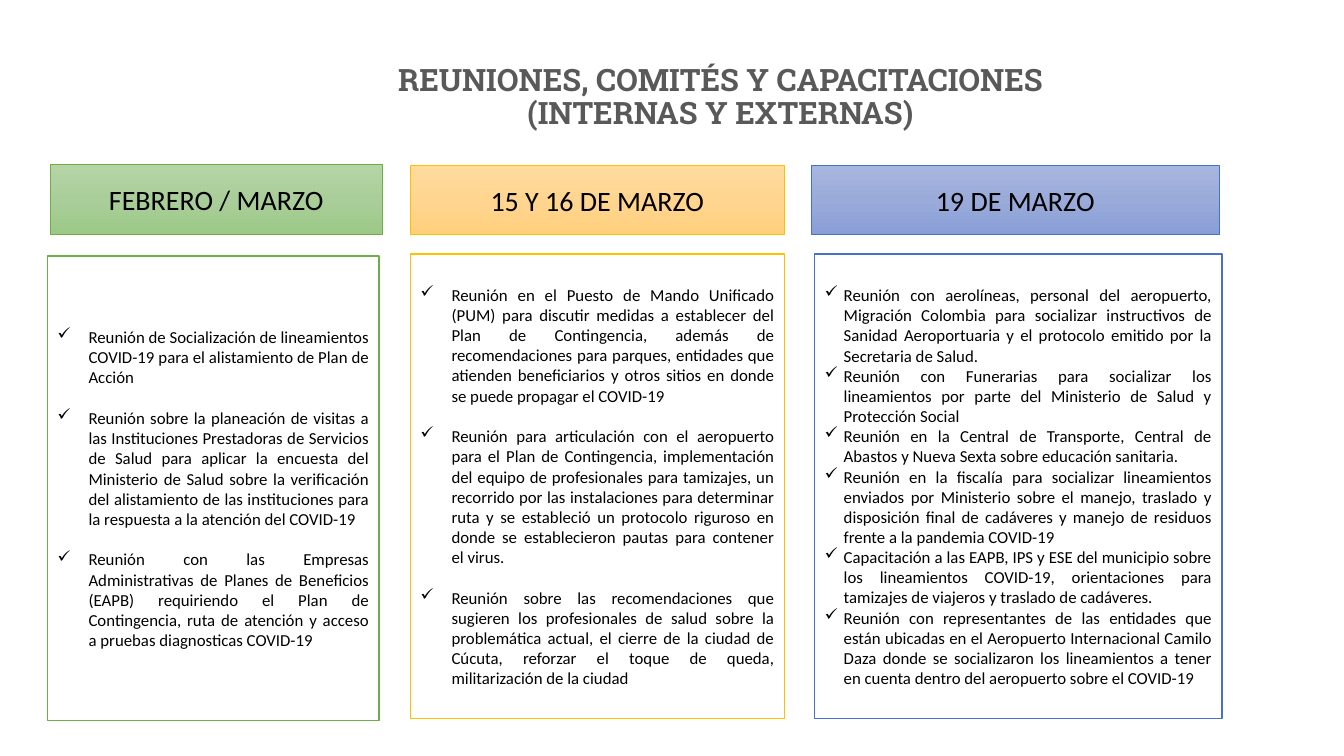
from copy import deepcopy
from dataclasses import dataclass

from lxml import etree
from pptx import Presentation
from pptx.dml.color import RGBColor
from pptx.enum.shapes import MSO_SHAPE
from pptx.enum.text import MSO_ANCHOR, PP_ALIGN
from pptx.oxml.ns import qn
from pptx.util import Inches, Pt

RECTANGLE = MSO_SHAPE.RECTANGLE
MIDDLE = MSO_ANCHOR.MIDDLE
CENTER, JUSTIFY = PP_ALIGN.CENTER, PP_ALIGN.JUSTIFY


@dataclass(frozen=True)
class Theme:
    title_font: str = "Roboto Slab"
    body_font: str = "Calibri"
    title_size: int = 22
    heading_size: int = 20
    body_size: int = 12
    title_color: str = "595959"
    text_color: str = "000000"
    panel_color: str = "FFFFFF"
    green: tuple = ("70AD47", ("B5D5A7", "AACE9A", "9CC987"))
    amber: tuple = ("FFC000", ("FFDB9E", "FFD590", "FFD07C"))
    blue: tuple = ("4472C4", ("A8B7DF", "9AABD9", "889ED7"))


THEME = Theme()
TITLE = "REUNIONES, COMITÉS Y CAPACITACIONES (INTERNAS Y EXTERNAS)"

# heading, colours, heading box, panel box, bullet indent (in), gap between items (pt), items
COLUMNS = [
    ("FEBRERO / MARZO", THEME.green, (0.5, 1.63, 3.29, 0.7), (0.47, 2.54, 3.29, 4.61), 0.31, 14.6, [
        "Reunión de Socialización de lineamientos COVID-19 para el alistamiento de Plan de Acción",
        "Reunión sobre la planeación de visitas a las Instituciones Prestadoras de Servicios de Salud "
        "para aplicar la encuesta del Ministerio de Salud sobre la verificación del alistamiento de "
        "las instituciones para la respuesta a la atención del COVID-19",
        "Reunión con las Empresas Administrativas de Planes de Beneficios (EAPB) requiriendo el Plan "
        "de Contingencia, ruta de atención y acceso a pruebas diagnosticas COVID-19",
    ]),
    ("15 Y 16 DE MARZO", THEME.amber, (4.07, 1.64, 3.71, 0.69), (4.07, 2.52, 3.71, 4.61), 0.31, 14.6, [
        "Reunión en el Puesto de Mando Unificado (PUM) para discutir medidas a establecer del Plan de "
        "Contingencia, además de recomendaciones para parques, entidades que atienden beneficiarios "
        "y otros sitios en donde se puede propagar el COVID-19",
        "Reunión para articulación con el aeropuerto para el Plan de Contingencia, implementación del "
        "equipo de profesionales para tamizajes, un recorrido por las instalaciones para determinar "
        "ruta y se estableció un protocolo riguroso en donde se establecieron pautas para contener "
        "el virus.",
        "Reunión sobre las recomendaciones que sugieren los profesionales de salud sobre la "
        "problemática actual, el cierre de la ciudad de Cúcuta, reforzar el toque de queda, "
        "militarización de la ciudad",
    ]),
    ("19 DE MARZO", THEME.blue, (8.05, 1.64, 4.04, 0.69), (8.08, 2.52, 4.04, 4.61), 0.19, 0, [
        "Reunión con aerolíneas, personal del aeropuerto, Migración Colombia para socializar "
        "instructivos de Sanidad Aeroportuaria y el protocolo emitido por la Secretaria de Salud.",
        "Reunión con Funerarias para socializar los lineamientos por parte del Ministerio de Salud y "
        "Protección Social",
        "Reunión en la Central de Transporte, Central de Abastos y Nueva Sexta sobre educación "
        "sanitaria.",
        "Reunión en la fiscalía para socializar lineamientos enviados por Ministerio sobre el manejo, "
        "traslado y disposición final de cadáveres y manejo de residuos frente a la pandemia COVID-19",
        "Capacitación a las EAPB, IPS y ESE del municipio sobre los lineamientos COVID-19, "
        "orientaciones para tamizajes de viajeros y traslado de cadáveres.",
        "Reunión con representantes de las entidades que están ubicadas en el Aeropuerto "
        "Internacional Camilo Daza donde se socializaron los lineamientos a tener en cuenta dentro "
        "del aeropuerto sobre el COVID-19",
    ]),
]


def lengths(box):
    return [Inches(value) for value in box]


def add_span(para, text, size, font, color, bold=False):
    span = para.add_run()
    span.text = text
    span.font.size = Pt(size)
    span.font.name = font
    span.font.bold = bold
    span.font.color.rgb = RGBColor.from_string(color)


def add_rectangle(page, box, line_color, line_width):
    shape = page.shapes.add_shape(RECTANGLE, *lengths(box))
    shape.shadow.inherit = False
    shape.line.color.rgb = RGBColor.from_string(line_color)
    shape.line.width = Pt(line_width)
    shape.text_frame.word_wrap = True
    shape.text_frame.vertical_anchor = MIDDLE
    return shape


def fill_downward(shape, colors):
    """Fill the shape with evenly spaced gradient stops from top to bottom."""
    shape.fill.gradient()
    shape.fill.gradient_angle = 270
    stop_list = shape.fill._xPr.find(qn("a:gradFill")).find(qn("a:gsLst"))
    while len(stop_list) < len(colors):
        stop_list.append(deepcopy(stop_list[0]))
    for index, (stop, color) in enumerate(zip(shape.fill.gradient_stops, colors)):
        stop.position = index / (len(colors) - 1)
        stop.color.rgb = RGBColor.from_string(color)


def add_check_bullet(para, indent):
    properties = para._p.get_or_add_pPr()
    properties.set("marL", str(Inches(indent)))
    properties.set("indent", str(-Inches(indent)))
    etree.SubElement(properties, qn("a:buChar")).set("char", "✓")


def add_title(page, box):
    frame = page.shapes.add_textbox(*lengths(box)).text_frame
    frame.word_wrap = True
    frame.vertical_anchor = MIDDLE
    para = frame.paragraphs[0]
    para.alignment = CENTER
    para.line_spacing = 0.9
    add_span(para, TITLE, THEME.title_size, THEME.title_font, THEME.title_color, True)


def add_heading(page, box, text, colors):
    line_color, gradient = colors
    shape = add_rectangle(page, box, line_color, 0.5)
    fill_downward(shape, gradient)
    para = shape.text_frame.paragraphs[0]
    para.alignment = CENTER
    add_span(para, text, THEME.heading_size, THEME.body_font, THEME.text_color)


def add_meeting_panel(page, box, line_color, items, indent, gap):
    shape = add_rectangle(page, box, line_color, 1)
    shape.fill.solid()
    shape.fill.fore_color.rgb = RGBColor.from_string(THEME.panel_color)
    frame = shape.text_frame
    for index, item in enumerate(items):
        para = frame.add_paragraph() if index else frame.paragraphs[0]
        para.alignment = JUSTIFY
        add_check_bullet(para, indent)
        if index and gap:
            para.space_before = Pt(gap)
        add_span(para, item, THEME.body_size, THEME.body_font, THEME.text_color)


def main():
    deck = Presentation()
    deck.slide_width, deck.slide_height = Inches(13.33), Inches(7.5)
    page = deck.slides.add_slide(deck.slide_layouts[6])
    add_title(page, (3.37, 0.35, 7.55, 1.24))
    for heading, colors, heading_box, panel_box, indent, gap, items in COLUMNS:
        add_heading(page, heading_box, heading, colors)
        add_meeting_panel(page, panel_box, colors[0], items, indent, gap)
    deck.save("out.pptx")


if __name__ == "__main__":
    main()
